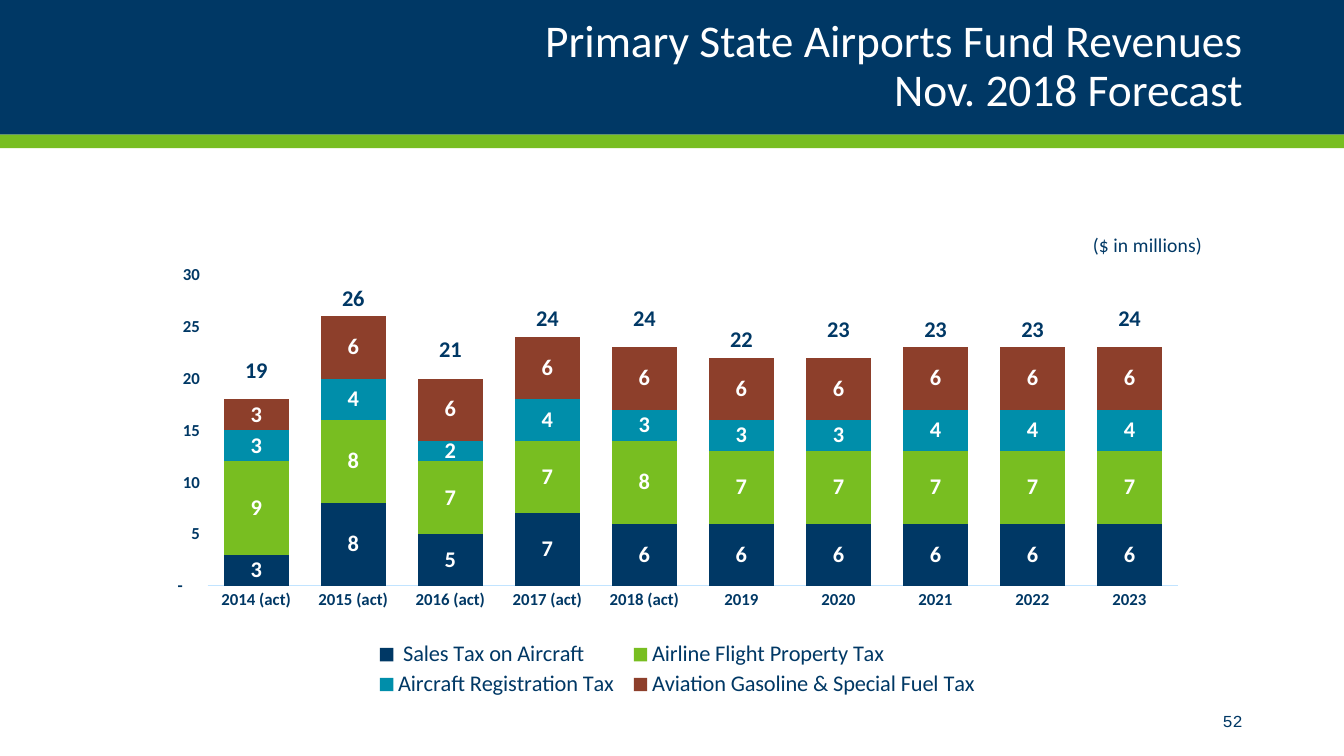
from lxml import etree
from pptx import Presentation
from pptx.chart.data import CategoryChartData
from pptx.dml.color import RGBColor
from pptx.enum.chart import XL_CHART_TYPE, XL_LABEL_POSITION, XL_LEGEND_POSITION, XL_MARKER_STYLE, XL_TICK_MARK
from pptx.enum.shapes import MSO_SHAPE
from pptx.enum.text import MSO_ANCHOR, PP_ALIGN
from pptx.oxml import parse_xml
from pptx.oxml.ns import qn
from pptx.util import Inches, Pt

STACKED = XL_CHART_TYPE.COLUMN_STACKED
CENTER, ABOVE = XL_LABEL_POSITION.CENTER, XL_LABEL_POSITION.ABOVE
BOTTOM = XL_LEGEND_POSITION.BOTTOM
NO_MARKER, NO_TICK = XL_MARKER_STYLE.NONE, XL_TICK_MARK.NONE
RECTANGLE, MIDDLE, RIGHT = MSO_SHAPE.RECTANGLE, MSO_ANCHOR.MIDDLE, PP_ALIGN.RIGHT

WIDTH, HEIGHT = 13.33, 7.5
COLORS = {"navy": "003865", "green": "78BE21", "teal": "008EAA",
          "rust": "8D3F2B", "white": "FFFFFF", "axis": "C2E4FF"}
BODY_FONT, NUMBER_FONT = "Calibri", "Courier New"
MILLIONS = '_(* #,##0_);_(* \\(#,##0\\);_(* "-"??_);_('
CHART_NS = "http://schemas.openxmlformats.org/drawingml/2006/chart"

YEARS = [f"{year} (act)" if year < 2019 else str(year) for year in range(2014, 2024)]
REVENUES = [
    (" Sales Tax on Aircraft", "navy", (3, 8, 5, 7, 6, 6, 6, 6, 6, 6)),
    ("Airline Flight Property Tax", "green", (9, 8, 7, 7, 8, 7, 7, 7, 7, 7)),
    ("Aircraft Registration Tax ", "teal", (3, 4, 2, 4, 3, 3, 3, 4, 4, 4)),
    ("Aviation Gasoline & Special Fuel Tax", "rust", (3, 6, 6, 6, 6, 6, 6, 6, 6, 6)),
]
TOTALS = (19, 26, 21, 24, 24, 22, 23, 23, 23, 24)


def rgb(color):
    """Return a named colour."""
    return RGBColor.from_string(COLORS[color])


def area(left, top, width, height):
    """Turn shares of the slide into lengths."""
    return [Inches(share * side) for share, side in
            zip((left, top, width, height), (WIDTH, HEIGHT) * 2)]


def style(font, size, color="navy", bold=False, name=BODY_FONT):
    """Set the look of a font."""
    font.size, font.bold, font.name = Pt(size), bold, name
    font.color.rgb = rgb(color)


def add_band(slide, top, height, color):
    """Draw a full-width band."""
    band = slide.shapes.add_shape(RECTANGLE, *area(0, top, 1, height))
    band.shadow.inherit = False
    band.fill.solid()
    band.fill.fore_color.rgb = rgb(color)
    band.line.fill.background()


def add_text(slide, place, lines, size, color, name=BODY_FONT, spacing=1.0):
    """Write right-aligned lines in a box."""
    frame = slide.shapes.add_textbox(*area(*place)).text_frame
    frame.word_wrap, frame.vertical_anchor = True, MIDDLE
    paragraph = frame.paragraphs[0]
    paragraph.alignment, paragraph.line_spacing = RIGHT, spacing
    for index, line in enumerate(lines):
        if index:
            paragraph.add_line_break()
        run = paragraph.add_run()
        run.text = line
        style(run.font, size, color, name=name)


def set_layout(parent, index, shares, inner=False):
    """Place a chart part by shares of the chart."""
    for old in parent.findall(qn("c:layout")):
        parent.remove(old)
    layout = etree.Element(qn("c:layout"))
    manual = etree.SubElement(layout, qn("c:manualLayout"))
    settings = [("layoutTarget", "inner")] if inner else []
    settings += [("xMode", "edge"), ("yMode", "edge"), *zip("xywh", shares)]
    for tag, value in settings:
        etree.SubElement(manual, qn(f"c:{tag}"), val=str(value))
    parent.insert(index, layout)


def label_values(series, color, position, number_format):
    """Show the values of a series."""
    labels = series.data_labels
    labels.show_value, labels.position = True, position
    labels.number_format, labels.number_format_is_linked = number_format, False
    style(labels.font, 16, color, bold=True)


def hidden_axis(kind, axis_id, cross_id, side, crossing, scale=""):
    """Build a deleted secondary axis."""
    return parse_xml(
        f'<c:{kind} xmlns:c="{CHART_NS}"><c:axId val="{axis_id}"/>'
        f'<c:scaling><c:orientation val="minMax"/>{scale}</c:scaling>'
        f'<c:delete val="1"/><c:axPos val="{side}"/>'
        f'<c:crossAx val="{cross_id}"/><c:crosses val="{crossing}"/></c:{kind}>')


def move_totals_to_line(chart):
    """Turn the last series into an unseen line that carries the totals."""
    bars = chart.plots[0]
    totals = bars.series[len(REVENUES)]._element
    for flag in totals.findall(qn("c:invertIfNegative")):
        totals.remove(flag)
    line = parse_xml(
        f'<c:lineChart xmlns:c="{CHART_NS}"><c:grouping val="standard"/>'
        '<c:varyColors val="0"/><c:marker val="1"/>'
        '<c:axId val="5001"/><c:axId val="5002"/></c:lineChart>')
    line.insert(2, totals)
    bars._element.addnext(line)
    scale = '<c:max val="30"/><c:min val="0"/>'
    value_axis = hidden_axis("valAx", 5002, 5001, "r", "max", scale)
    chart.value_axis._element.addnext(value_axis)
    value_axis.addnext(hidden_axis("catAx", 5001, 5002, "b", "autoZero"))
    series = chart.plots[1].series[0]
    series.format.line.fill.background()
    series.marker.style, series.smooth = NO_MARKER, False
    label_values(series, "navy", ABOVE, "0")


def format_axes(chart):
    """Set both visible axes."""
    for axis in (chart.category_axis, chart.value_axis):
        axis.has_major_gridlines = False
        axis.major_tick_mark = axis.minor_tick_mark = NO_TICK
        style(axis.tick_labels.font, 12, bold=True)
    years, dollars = chart.category_axis, chart.value_axis
    years.format.line.color.rgb = rgb("axis")
    years.format.line.width = Pt(0.75)
    dollars.format.line.fill.background()
    dollars.minimum_scale, dollars.maximum_scale, dollars.major_unit = 0, 30, 5
    dollars.tick_labels.number_format = MILLIONS
    dollars.tick_labels.number_format_is_linked = False


def add_legend(chart):
    """Add the legend without the totals."""
    chart.has_legend = True
    legend = chart.legend
    legend.position, legend.include_in_layout = BOTTOM, False
    style(legend.font, 16)
    entry = etree.Element(qn("c:legendEntry"))
    etree.SubElement(entry, qn("c:idx"), val=str(len(REVENUES)))
    etree.SubElement(entry, qn("c:delete"), val="1")
    legend._element.insert(1, entry)
    set_layout(legend._element, 2, (0.22, 0.88, 0.57, 0.12))


def add_unit_title(chart):
    """Name the unit above the columns."""
    chart.has_title = True
    title = chart.chart_title
    run = title.text_frame.paragraphs[0].add_run()
    run.text = "($ in millions)"
    style(run.font, 14)
    title.include_in_layout = False
    set_layout(title._element, 1, (0.89, 0.09))


def add_revenue_chart(slide, place):
    """Draw the stacked revenues and their totals."""
    data = CategoryChartData()
    data.categories = YEARS
    for name, _, values in REVENUES:
        data.add_series(name, values)
    data.add_series("Series 5", TOTALS)
    chart = slide.shapes.add_chart(STACKED, *area(*place), data).chart
    style(chart.font, 10)
    bars = chart.plots[0]
    bars.gap_width, bars.overlap, bars.vary_by_categories = 50, 100, False
    for series, (_, color, _) in zip(bars.series, REVENUES):
        series.format.fill.solid()
        series.format.fill.fore_color.rgb = rgb(color)
        label_values(series, "white", CENTER, MILLIONS)
    format_axes(chart)
    move_totals_to_line(chart)
    add_legend(chart)
    add_unit_title(chart)
    set_layout(bars._element.getparent(), 0, (0.066, 0.18, 0.907, 0.599), inner=True)


def main():
    """Build and save the slide."""
    deck = Presentation()
    deck.slide_width, deck.slide_height = Inches(WIDTH), Inches(HEIGHT)
    slide = deck.slides.add_slide(deck.slide_layouts[6])
    add_band(slide, 0, 0.178, "navy")
    add_band(slide, 0.178, 0.018, "green")
    add_text(slide, (0.069, 0.022, 0.863, 0.133),
             ("Primary State Airports Fund Revenues", "Nov. 2018 Forecast"),
             32.4, "white", spacing=0.9)
    add_revenue_chart(slide, (0.102, 0.24, 0.796, 0.687))
    add_text(slide, (0.812, 0.927, 0.12, 0.053), ("52",), 12, "navy", NUMBER_FONT)
    deck.save("out.pptx")


if __name__ == "__main__":
    main()
